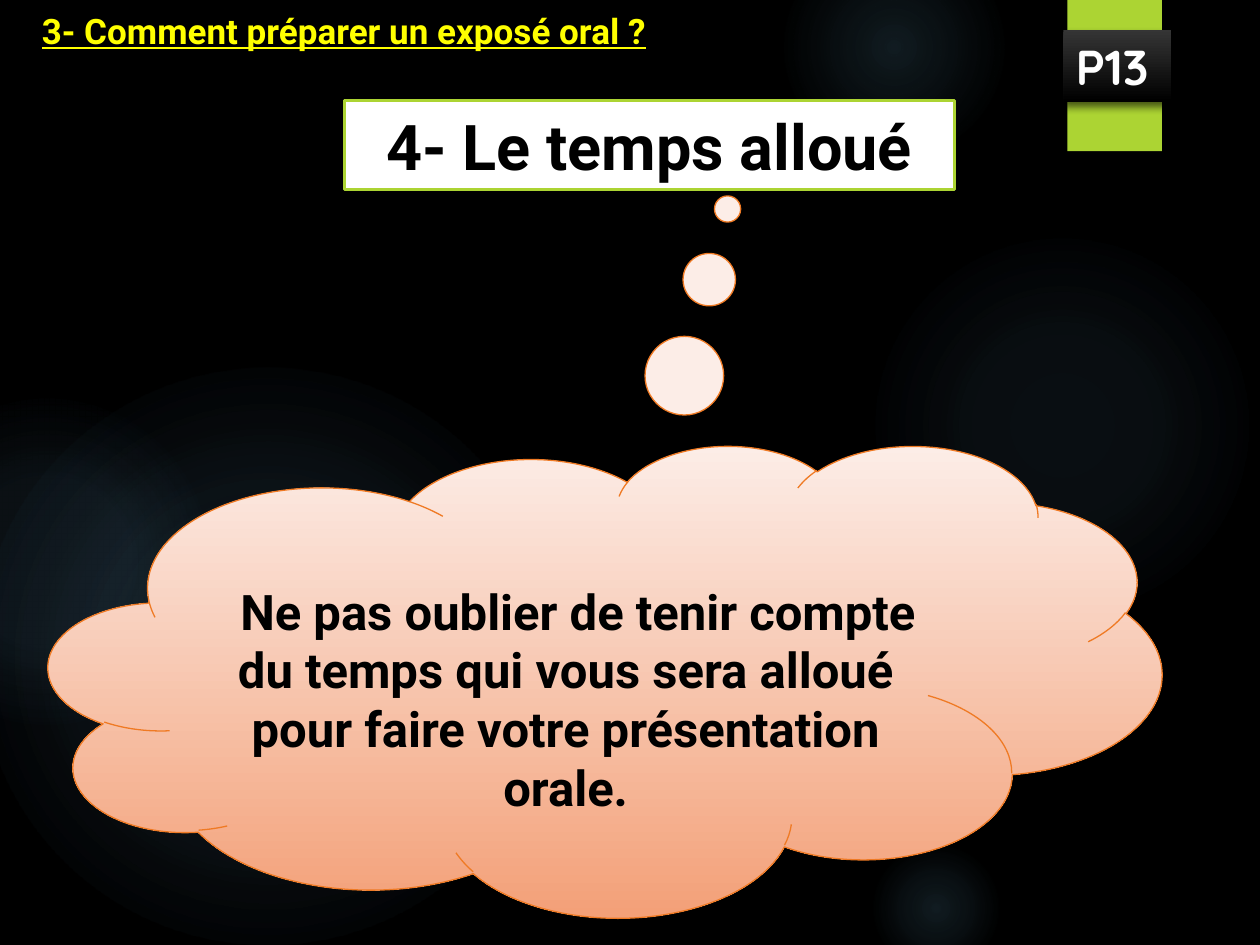
import pptx
import pptx.util
import pptx.oxml
import pptx.oxml.ns
import pptx.dml.color
import pptx.enum.shapes
import pptx.enum.text

Pt = pptx.util.Pt
kinds = pptx.enum.shapes.MSO_SHAPE
sides = pptx.enum.text.PP_ALIGN
hold = pptx.enum.text.MSO_ANCHOR

COLORS = {
    "night": "000000", "glow": "7AC4F0", "lime": "ACD433", "yellow": "FFFF00",
    "white": "FFFFFF", "cream": "FCEDE7", "peach": "F3A078",
    "orange": "EF7A24", "gray": "353535",
}

GLOWS = [
    (496, 132, 222, [(0, 7), (36, 6), (69, 0)]),
    (448, -36, 126, [(0, 14), (36, 7), (73, 0)]),
    (496, 480, 78, [(0, 14), (36, 7), (66, 0)]),
    (-12, 210, 330, [(0, 11), (36, 10), (75, 0)]),
    (-66, 228, 186, [(0, 8), (36, 8), (72, 0)]),
]
TITLE = "3- Comment préparer un exposé oral ?"
HEAD = "4- Le temps alloué"
ADVICE = ("Ne pas oublier de tenir compte du temps qui vous sera alloué "
          "pour faire votre présentation orale.")
PAGE = "P13"


def tint(name):
    return pptx.dml.color.RGBColor.from_string(COLORS[name])


def place(kind, box, fill=None, line=None, width=0.75):
    shape = slide.shapes.add_shape(kind, *map(Pt, box))
    shape.shadow.inherit = False
    if fill:
        shape.fill.solid()
        shape.fill.fore_color.rgb = tint(fill)
    if line:
        shape.line.color.rgb = tint(line)
        shape.line.width = Pt(width)
    else:
        shape.line.fill.background()
    return shape


def blend(shape, stops, course):
    marks = "".join(
        f'<a:gs pos="{spot * 1000}"><a:srgbClr val="{COLORS[name]}">'
        f'<a:alpha val="{alpha * 1000}"/></a:srgbClr></a:gs>'
        for spot, name, alpha in stops)
    shape.fill.background()
    props = shape.element.spPr
    blank = props.find(pptx.oxml.ns.qn("a:noFill"))
    props.replace(blank, pptx.oxml.parse_xml(
        f'<a:gradFill {pptx.oxml.ns.nsdecls("a")} rotWithShape="1">'
        f'<a:gsLst>{marks}</a:gsLst>{course}</a:gradFill>'))


def shade(shape, alpha, blur, drop):
    cast = shape.element.spPr.find(pptx.oxml.ns.qn("a:effectLst"))
    cast.append(pptx.oxml.parse_xml(
        f'<a:outerShdw {pptx.oxml.ns.nsdecls("a")} blurRad="{Pt(blur)}" '
        f'dist="{Pt(drop)}" dir="5400000" rotWithShape="0">'
        f'<a:srgbClr val="{COLORS["night"]}"><a:alpha val="{alpha * 1000}"/>'
        f'</a:srgbClr></a:outerShdw>'))


def write(shape, text, size, color, font="Roboto", side=sides.CENTER, wrap=True):
    frame = shape.text_frame
    frame.word_wrap = wrap
    frame.vertical_anchor = hold.MIDDLE
    para = frame.paragraphs[0]
    para.text = text
    para.alignment = side
    para.font.name = font
    para.font.size = Pt(size)
    para.font.bold = True
    para.font.color.rgb = tint(color)
    return frame, para


deck = pptx.Presentation()
deck.slide_width, deck.slide_height = Pt(720), Pt(540)
slide = deck.slides.add_slide(deck.slide_layouts[6])
slide.background.fill.solid()
slide.background.fill.fore_color.rgb = tint("night")

ROUND = ('<a:path path="circle"><a:fillToRect l="50000" t="50000" '
         'r="50000" b="50000"/></a:path>')
DOWN = '<a:lin ang="5400000" scaled="0"/>'

for left, top, size, fades in GLOWS:
    glow = place(kinds.OVAL, (left, top, size, size))
    blend(glow, [(spot, "glow", alpha) for spot, alpha in fades], ROUND)

strip = place(kinds.RECTANGLE, (610, 0, 54, 86.4), "lime")
shade(strip, 45, 3, 2)

title = slide.shapes.add_textbox(*map(Pt, (16.8, 0, 574, 39.6)))
frame, para = write(title, TITLE, 20, "yellow", side=sides.LEFT)
frame.vertical_anchor = hold.TOP
frame.margin_top = Pt(5.5)
para.font.underline = True

head = place(kinds.RECTANGLE, (196.8, 57.3, 348.7, 51), "white", "lime", 1.5)
write(head, HEAD, 36, "night")

cloud = place(kinds.CLOUD_CALLOUT, (27.8, 254.2, 636, 269.6), line="orange")
cloud.adjustments[0] = 0.11
cloud.adjustments[1] = -1
blend(cloud, [(0, "cream", 100), (100, "peach", 100)], DOWN)
frame, para = write(cloud, ADVICE, 28, "night")
frame.margin_top = Pt(36.6)
para._p.get_or_add_pPr().set("indent", str(Pt(14)))

badge = place(kinds.RECTANGLE, (607.6, 16.9, 61.6, 41.2))
blend(badge, [(0, "gray", 100), (100, "night", 100)], DOWN)
shade(badge, 60, 5, 3)
write(badge, PAGE, 28, "white", "Quicksand", sides.LEFT, False)

deck.save("out.pptx")
